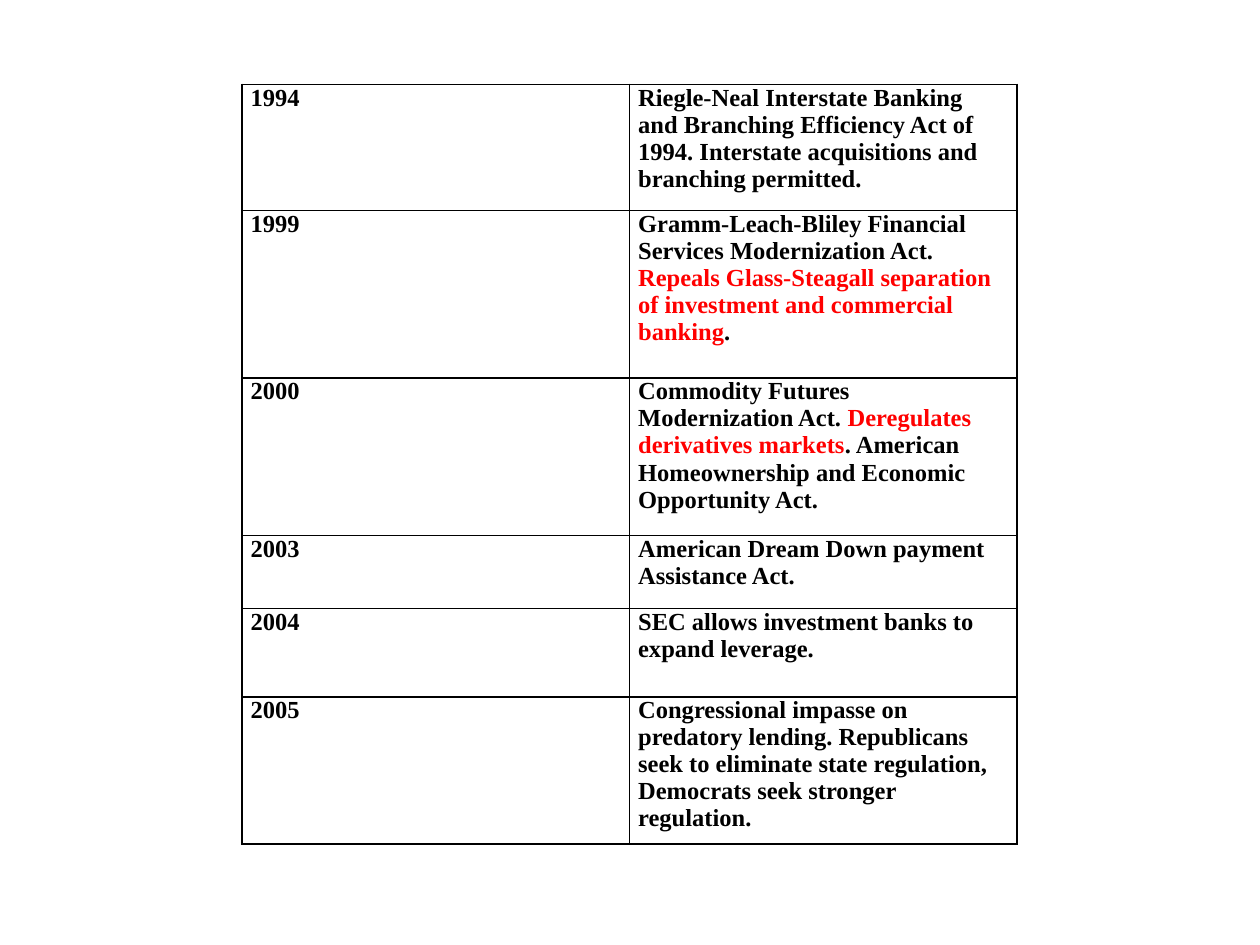
"""Build a slide with a table of financial legislation by year."""
from lxml import etree
from pptx import Presentation
from pptx.dml.color import RGBColor
from pptx.enum.text import MSO_ANCHOR
from pptx.oxml.ns import qn
from pptx.util import Inches, Pt

TOP = MSO_ANCHOR.TOP
BLACK = RGBColor(0, 0, 0)
RED = RGBColor(255, 0, 0)
FONT = "Times New Roman"
TEXT_SIZE = Pt(14)
BORDER_WIDTH = Pt(1)
BORDER_SIDES = ("a:lnL", "a:lnR", "a:lnT", "a:lnB")

TABLE_LEFT, TABLE_TOP, TABLE_WIDTH = 1.92, 0.67, 6.15
LAST_SPACE_AFTER = Pt(5)

ACTS = [
    ("1994", 1, [("Riegle-Neal Interstate Banking and Branching Efficiency Act of 1994. "
                  "Interstate acquisitions and branching permitted.", BLACK)]),
    ("1999", 1.33, [("Gramm-Leach-Bliley Financial Services Modernization Act. ", BLACK),
                    ("Repeals Glass-Steagall separation of investment and commercial banking", RED),
                    (".", BLACK)]),
    ("2000", 1.25, [("Commodity Futures Modernization Act. ", BLACK),
                    ("Deregulates derivatives markets", RED),
                    (". American Homeownership and Economic Opportunity Act.", BLACK)]),
    ("2003", 0.58, [("American Dream Down payment Assistance Act.", BLACK)]),
    ("2004", 0.7, [("SEC allows investment banks to expand leverage.", BLACK)]),
    ("2005", 1.17, [("Congressional impasse on predatory lending. Republicans seek to eliminate "
                     "state regulation, Democrats seek stronger regulation.", BLACK)]),
]


def add_borders(cell):
    properties = cell._tc.get_or_add_tcPr()
    for side in BORDER_SIDES:
        line = etree.SubElement(properties, qn(side), w=str(BORDER_WIDTH))
        fill = etree.SubElement(line, qn("a:solidFill"))
        etree.SubElement(fill, qn("a:srgbClr"), val=str(BLACK))


def fill_cell(cell, parts):
    cell.margin_left = cell.margin_right = Inches(0.07)
    cell.margin_top = cell.margin_bottom = 0
    cell.vertical_anchor = TOP
    add_borders(cell)
    cell.fill.background()
    paragraph = cell.text_frame.paragraphs[0]
    for text, color in parts:
        run = paragraph.add_run()
        run.text = text
        run.font.name = FONT
        run.font.size = TEXT_SIZE
        run.font.bold = True
        run.font.color.rgb = color
    return paragraph


def main():
    presentation = Presentation()
    presentation.slide_width = Inches(10)
    presentation.slide_height = Inches(7.5)
    slide = presentation.slides.add_slide(presentation.slide_layouts[6])

    table_height = sum(height for _, height, _ in ACTS)
    table = slide.shapes.add_table(
        len(ACTS), 2, Inches(TABLE_LEFT), Inches(TABLE_TOP),
        Inches(TABLE_WIDTH), Inches(table_height)).table
    table.first_row = False
    table.horz_banding = False

    for row, (year, height, description) in zip(table.rows, ACTS):
        row.height = Inches(height)
        for cell, parts in zip(row.cells, ([(year, BLACK)], description)):
            paragraph = fill_cell(cell, parts)
            if year == ACTS[-1][0]:
                paragraph.space_after = LAST_SPACE_AFTER

    presentation.save("out.pptx")


if __name__ == "__main__":
    main()
